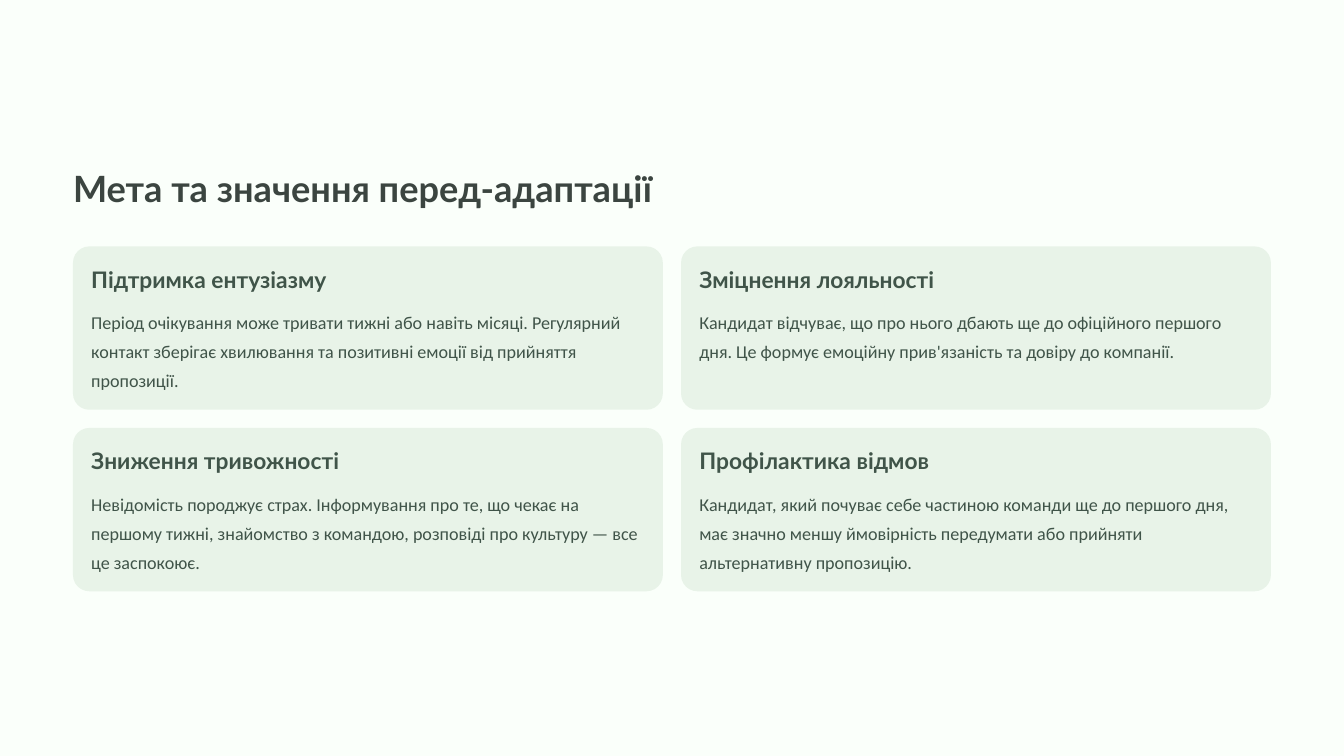
from pptx import Presentation
from pptx.dml.color import RGBColor
from pptx.enum.shapes import MSO_SHAPE
from pptx.enum.text import MSO_ANCHOR, MSO_AUTO_SIZE, PP_ALIGN
from pptx.util import Pt


def color(hex_value):
    return RGBColor.from_string(hex_value)


def write(box, text, font_name, size, line_height, hex_value, bold=False, wrap=False):
    frame = box.text_frame
    frame.text = text
    frame.auto_size = MSO_AUTO_SIZE.NONE
    frame.word_wrap = wrap
    frame.vertical_anchor = MSO_ANCHOR.TOP
    frame.margin_left = frame.margin_top = frame.margin_right = frame.margin_bottom = 0
    paragraph = frame.paragraphs[0]
    paragraph.alignment = PP_ALIGN.LEFT
    paragraph.line_spacing = Pt(line_height)
    paragraph.space_before = Pt(0)
    font = paragraph.runs[0].font
    font.name = font_name
    font.size = Pt(size)
    font.bold = bold
    font.color.rgb = color(hex_value)


benefits = [
    ("Підтримка ентузіазму",
     "Період очікування може тривати тижні або навіть місяці. Регулярний контакт "
     "зберігає хвилювання та позитивні емоції від прийняття пропозиції."),
    ("Зміцнення лояльності",
     "Кандидат відчуває, що про нього дбають ще до офіційного першого дня. "
     "Це формує емоційну прив'язаність та довіру до компанії."),
    ("Зниження тривожності",
     "Невідомість породжує страх. Інформування про те, що чекає на першому тижні, "
     "знайомство з командою, розповіді про культуру — все це заспокоює."),
    ("Профілактика відмов",
     "Кандидат, який почуває себе частиною команди ще до першого дня, має значно "
     "меншу ймовірність передумати або прийняти альтернативну пропозицію."),
]

deck = Presentation()
deck.slide_width, deck.slide_height = Pt(1152), Pt(648)
slide = deck.slides.add_slide(deck.slide_layouts[5])
slide.background.fill.solid()
slide.background.fill.fore_color.rgb = color("FAFFFA")

margin, grid_top = 62.6, 211.2
card_width, card_height, gap, padding = 505.6, 140, 15.6, 15.6
text_width = card_width - 2 * padding

title = slide.shapes.title
title.left, title.top, title.width, title.height = Pt(margin), Pt(141.1), Pt(561.6), Pt(39)
write(title, "Мета та значення перед-адаптації", "Lato", 31, 39, "3B4540", bold=True)

for index, (heading, description) in enumerate(benefits):
    row, column = divmod(index, 2)
    left = margin + column * (card_width + gap)
    top = grid_top + row * (card_height + gap)

    card = slide.shapes.add_shape(
        MSO_SHAPE.ROUNDED_RECTANGLE, Pt(left), Pt(top), Pt(card_width), Pt(card_height))
    card.adjustments[0] = 0.1
    card.shadow.inherit = False
    card.fill.solid()
    card.fill.fore_color.rgb = color("E8F3E8")
    card.line.fill.background()

    heading_box = slide.shapes.add_textbox(
        Pt(left + padding), Pt(top + padding), Pt(240), Pt(24))
    write(heading_box, heading, "Lato", 19.5, 24, "405449", bold=True)

    description_box = slide.shapes.add_textbox(
        Pt(left + padding), Pt(top + 49.4), Pt(text_width), Pt(75))
    write(description_box, description, "Calibri", 15.5, 25, "405449", wrap=True)

deck.save("out.pptx")
